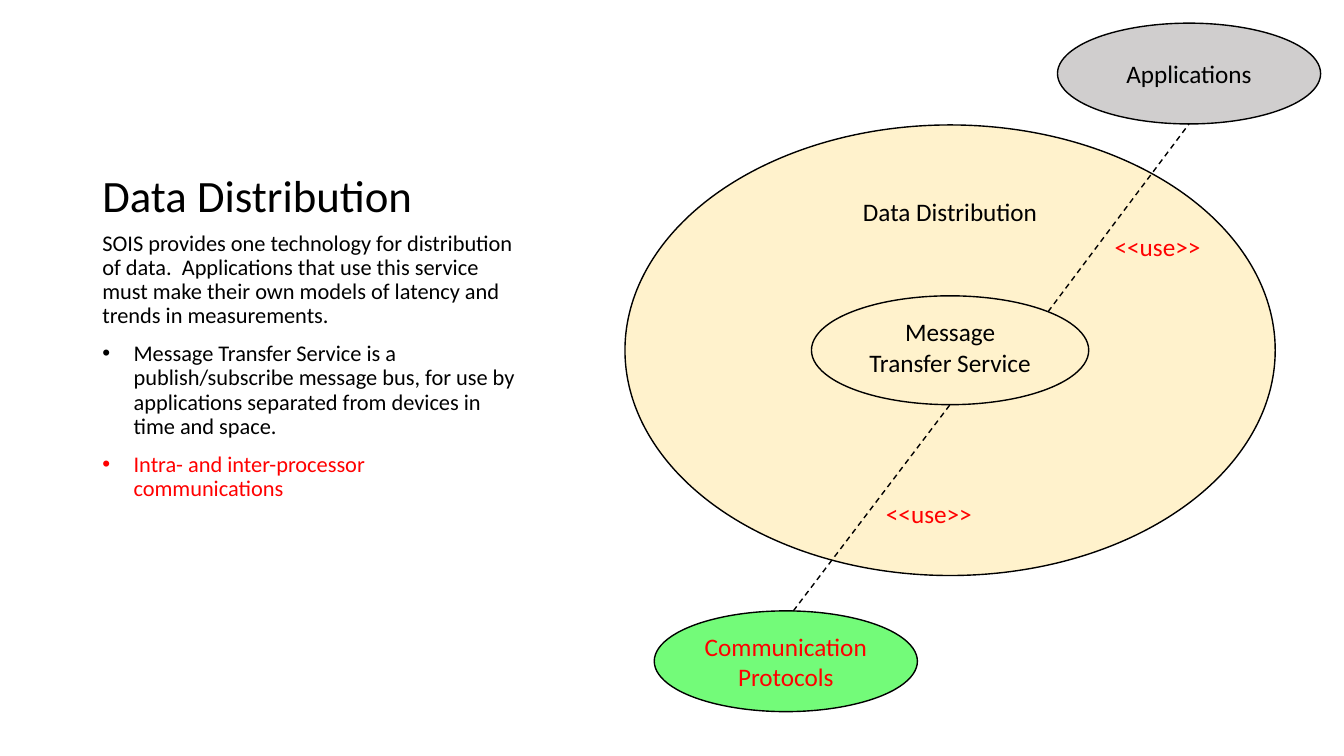
from dataclasses import dataclass
from math import sqrt

from lxml.etree import SubElement
from pptx import Presentation
from pptx.dml.color import RGBColor
from pptx.enum.dml import MSO_LINE
from pptx.enum.shapes import MSO_CONNECTOR, MSO_SHAPE
from pptx.enum.text import MSO_ANCHOR, PP_ALIGN
from pptx.oxml.ns import qn
from pptx.util import Inches, Pt


@dataclass(frozen=True)
class Theme:
    font: str = "Calibri"
    title: int = 32
    body: int = 16
    label: int = 18
    ink: str = "000000"
    accent: str = "FF0000"
    cream: str = "FFF2CC"
    grey: str = "D0CECE"
    green: str = "73FB79"


theme = Theme()
deck = Presentation()
deck.slide_width, deck.slide_height = Inches(13.33), Inches(7.5)
slide = deck.slides.add_slide(deck.slide_layouts[6])
shapes = slide.shapes


def place(*shares):
    """Turn alternating x and y percentages of the slide into lengths."""
    sides = (deck.slide_width, deck.slide_height)
    return [round(sides[i % 2] * share / 100) for i, share in enumerate(shares)]


def write(paragraph, text, size, color):
    paragraph.text = text
    for run in paragraph.runs:
        run.font.name = theme.font
        run.font.size = Pt(size)
        run.font.color.rgb = RGBColor.from_string(color)


# Left column: heading and explanation
heading = shapes.add_textbox(*place(6.88, 6.67, 32.25, 23.33)).text_frame
heading.word_wrap = True
heading.vertical_anchor = MSO_ANCHOR.BOTTOM
write(heading.paragraphs[0], "Data Distribution", theme.title, theme.ink)
heading.paragraphs[0].line_spacing = 0.9

statements = [
    ("SOIS provides one technology for distribution of data.  Applications that use "
     "this service must make their own models of latency and trends in measurements.",
     theme.ink, False),
    ("Message Transfer Service is a publish/subscribe message bus, for use by "
     "applications separated from devices in time and space.", theme.ink, True),
    ("Intra- and inter-processor communications", theme.accent, True),
]
explanation = shapes.add_textbox(*place(6.88, 30, 32.25, 55.56)).text_frame
explanation.word_wrap = True
for index, (statement, color, bulleted) in enumerate(statements):
    paragraph = explanation.add_paragraph() if index else explanation.paragraphs[0]
    write(paragraph, statement, theme.body, color)
    paragraph.line_spacing = 0.9
    paragraph.space_before = Pt(10)
    if bulleted:
        properties = paragraph._p.get_or_add_pPr()
        indent = Inches(0.31)
        properties.set("marL", str(indent))
        properties.set("indent", str(-indent))
        SubElement(properties, qn("a:buFont"), typeface="Arial")
        SubElement(properties, qn("a:buChar"), char="•")

# Diagram: ellipses given by centre and size
center_x, center_y = 70.69, 46.33
service_width, service_height = 20.63, 14.4
outer_width, outer_height = 19.58, 13.33
apps_x, apps_y = 88.47, 9.73
protocols_x, protocols_y = 58.47, 87.47
ellipses = [
    ("Data Distribution", center_x, center_y, 48.38, 59.6,
     theme.cream, theme.ink, MSO_ANCHOR.TOP),
    ("Message Transfer Service", center_x, center_y, service_width, service_height,
     theme.cream, theme.ink, MSO_ANCHOR.TOP),
    ("Applications", apps_x, apps_y, outer_width, outer_height,
     theme.grey, theme.ink, MSO_ANCHOR.MIDDLE),
    ("Communication\nProtocols", protocols_x, protocols_y, outer_width, outer_height,
     theme.green, theme.accent, MSO_ANCHOR.MIDDLE),
]
for label, x, y, width, height, fill, color, anchor in ellipses:
    box = place(x - width / 2, y - height / 2, width, height)
    ellipse = shapes.add_shape(MSO_SHAPE.OVAL, *box)
    ellipse.shadow.inherit = False
    ellipse.fill.solid()
    ellipse.fill.fore_color.rgb = RGBColor.from_string(fill)
    ellipse.line.color.rgb = RGBColor.from_string(theme.ink)
    ellipse.line.width = Pt(1)
    ellipse.text_frame.word_wrap = True
    ellipse.text_frame.vertical_anchor = anchor
    caption = ellipse.text_frame.paragraphs[0]
    write(caption, label, theme.label, color)
    caption.alignment = PP_ALIGN.CENTER

# Each use relation: its line, then the corner of its label
diagonal = 1 / sqrt(8)
relations = [
    ((center_x + service_width * diagonal, center_y - service_height * diagonal,
      apps_x, apps_y + outer_height / 2), (82.2, 30)),
    ((59.03, protocols_y - outer_height / 2,
      center_x, center_y + service_height / 2), (65.18, 65.2)),
]
for ends, corner in relations:
    link = shapes.add_connector(MSO_CONNECTOR.STRAIGHT, *place(*ends))
    link.line.color.rgb = RGBColor.from_string(theme.ink)
    link.line.width = Pt(1)
    link.line.dash_style = MSO_LINE.DASH
    SubElement(link._element.spPr, qn("a:effectLst"))
    use = shapes.add_textbox(*place(*corner, 7.95, 5.33)).text_frame
    use.word_wrap = False
    write(use.paragraphs[0], "<<use>>", theme.label, theme.accent)

deck.save("out.pptx")
